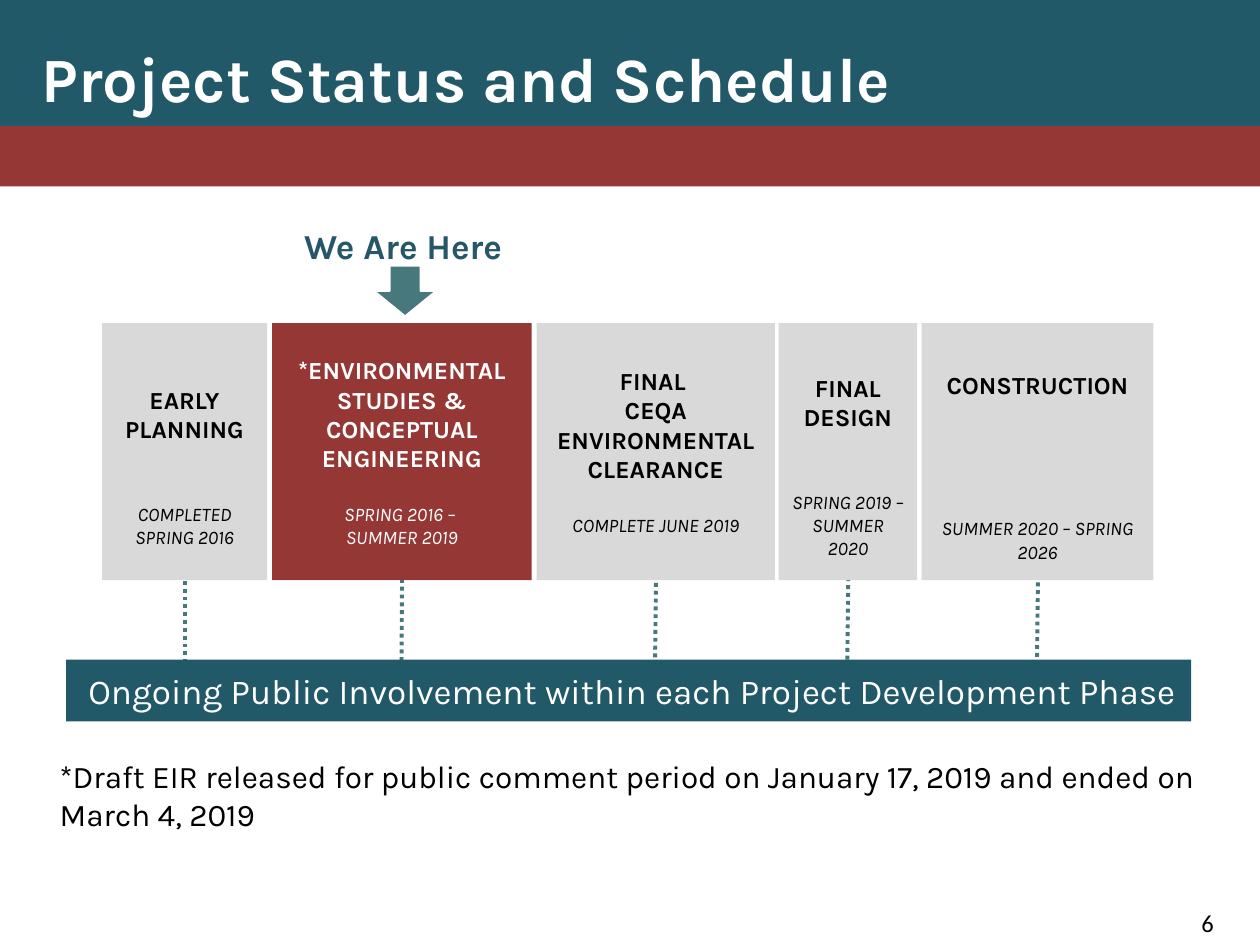
"""Build the project status and schedule slide."""
import pptx
import pptx.util
import pptx.dml.color
import pptx.enum.dml
import pptx.enum.shapes
import pptx.enum.text
import pptx.oxml

RGB = pptx.dml.color.RGBColor
Pt = pptx.util.Pt
SHAPE = pptx.enum.shapes.MSO_SHAPE
ALIGN = pptx.enum.text.PP_ALIGN
ANCHOR = pptx.enum.text.MSO_ANCHOR
BLUE = RGB(0x22, 0x59, 0x68)
INK = RGB(0x26, 0x57, 0x68)
TEAL = RGB(0x47, 0x78, 0x7C)
RED = RGB(0x95, 0x37, 0x35)
GREY = RGB(0xD9, 0xD9, 0xD9)
WHITE = RGB(0xFF, 0xFF, 0xFF)
BLACK = RGB(0, 0, 0)

deck = pptx.Presentation()
deck.slide_width = pptx.util.Inches(10)
deck.slide_height = pptx.util.Inches(7.5)
col = deck.slide_width / 100
row = deck.slide_height / 75
slide = deck.slides.add_slide(deck.slide_layouts[5])
shapes = slide.shapes


def area(x, y, w, h):
    return int(x * col), int(y * row), int(w * col), int(h * row)


def write(shape, text, size=14, color=BLACK, font="Karla", bold=False, italic=False,
          align=ALIGN.CENTER, anchor=ANCHOR.TOP, before=0, more=False):
    frame = shape.text_frame
    frame.word_wrap = True
    frame.auto_size = pptx.enum.text.MSO_AUTO_SIZE.NONE
    frame.vertical_anchor = anchor
    for i, line in enumerate(text.split("\n")):
        para = frame.add_paragraph() if more or i else frame.paragraphs[0]
        para.alignment = align
        if before and not i:
            para.space_before = Pt(before)
        run = para.add_run()
        run.text = line
        run.font.name = font
        run.font.size = Pt(size)
        run.font.bold = bold
        run.font.italic = italic
        run.font.color.rgb = color
    return frame


phases = [
    (8.1, 13.1, GREY, BLACK, 4.9, 2, "EARLY PLANNING", "COMPLETED SPRING 2016", 40.5, 56.8, 0),
    (21.6, 20.6, RED, WHITE, 2.55, 1, "*ENVIRONMENTAL STUDIES & CONCEPTUAL ENGINEERING",
     "SPRING 2016 – \nSUMMER 2019", 39.1, 55.8, 0.05),
    (42.6, 18.9, GREY, BLACK, 3.4, 1, "FINAL \nCEQA ENVIRONMENTAL\nCLEARANCE",
     "COMPLETE JUNE 2019", 38.8, 55.8, 0.1),
    (61.8, 11, GREY, BLACK, 3.95, 2, "FINAL DESIGN", "SPRING 2019 – SUMMER 2020",
     39.6, 56.6, 0.1),
    (73.15, 18.4, GREY, BLACK, 3.7, 4, "CONSTRUCTION", "SUMMER 2020 – SPRING 2026",
     40, 56.8, 0.1),
]

for x, w, *rest, top, end, lean in phases:
    mid = x + w / 2
    link = shapes.add_connector(
        pptx.enum.shapes.MSO_CONNECTOR.STRAIGHT, int((mid + lean) * col), int(top * row),
        int((mid - lean) * col), int(end * row))
    link.line.color.rgb = TEAL
    link.line.width = Pt(2.25)
    link.line.dash_style = pptx.enum.dml.MSO_LINE.ROUND_DOT
    link._element.spPr.append(pptx.oxml.parse_xml(
        '<a:effectLst xmlns:a="http://schemas.openxmlformats.org/drawingml/2006/main"/>'))

solids = {}
for name, kind, place, fill in [
    ("band", SHAPE.RECTANGLE, (0, 0, 100, 10), BLUE),
    ("stripe", SHAPE.RECTANGLE, (0, 10, 100, 4.8), RED),
    ("arrow", SHAPE.DOWN_ARROW, (29.7, 21.1, 4.9, 4), TEAL),
    ("bar", SHAPE.RECTANGLE, (5.25, 52.35, 89.3, 4.9), BLUE),
] + [(p[6], SHAPE.RECTANGLE, (p[0], 25.64, p[1], 20.4), p[2]) for p in phases]:
    solid = shapes.add_shape(kind, *area(*place))
    solid.shadow.inherit = False
    solid.fill.solid()
    solid.fill.fore_color.rgb = fill
    solid.line.fill.background()
    solids[name] = solid

arrow = solids["arrow"]
arrow.line.color.rgb = WHITE
arrow.line.width = Pt(1)

for x, w, fill, ink, inset, gap, name, date, *rest in phases:
    card = solids[name]
    frame = write(card, name, color=ink, bold=True)
    frame.margin_top = int(inset * row)
    if "CEQA" in name:
        frame.margin_left = frame.margin_right = 0
    write(card, date, size=11, color=ink, italic=True, before=gap * 16.8, more=True)

title = shapes.title
title.left, title.top, title.width, title.height = area(2.3, 0.65, 96.2, 9.1)
frame = write(title, "Project Status and Schedule", size=36, color=WHITE, bold=True,
              align=ALIGN.LEFT, anchor=ANCHOR.BOTTOM)
frame.paragraphs[0].line_spacing = 0.9
shapes._spTree.append(title._element)

frame = write(solids["bar"], "Ongoing Public Involvement within each Project Development Phase",
              size=20, color=WHITE, anchor=ANCHOR.MIDDLE)
frame.margin_left = int(1.4 * col)
frame.margin_right = int(0.8 * col)

here = shapes.add_textbox(*area(22.25, 17.3, 19.5, 4.4))
write(here, "We Are Here", size=20, color=INK, bold=True)
note = shapes.add_textbox(*area(3.75, 59.6, 96.2, 7.1))
write(note, "*Draft EIR released for public comment period on January 17, 2019 "
      "and ended on March 4, 2019", size=18, align=ALIGN.LEFT)
number = shapes.add_textbox(*area(91.7, 71.5, 8.3, 3.4))
write(number, "6", font="Calibri", anchor=ANCHOR.MIDDLE)

deck.save("out.pptx")
